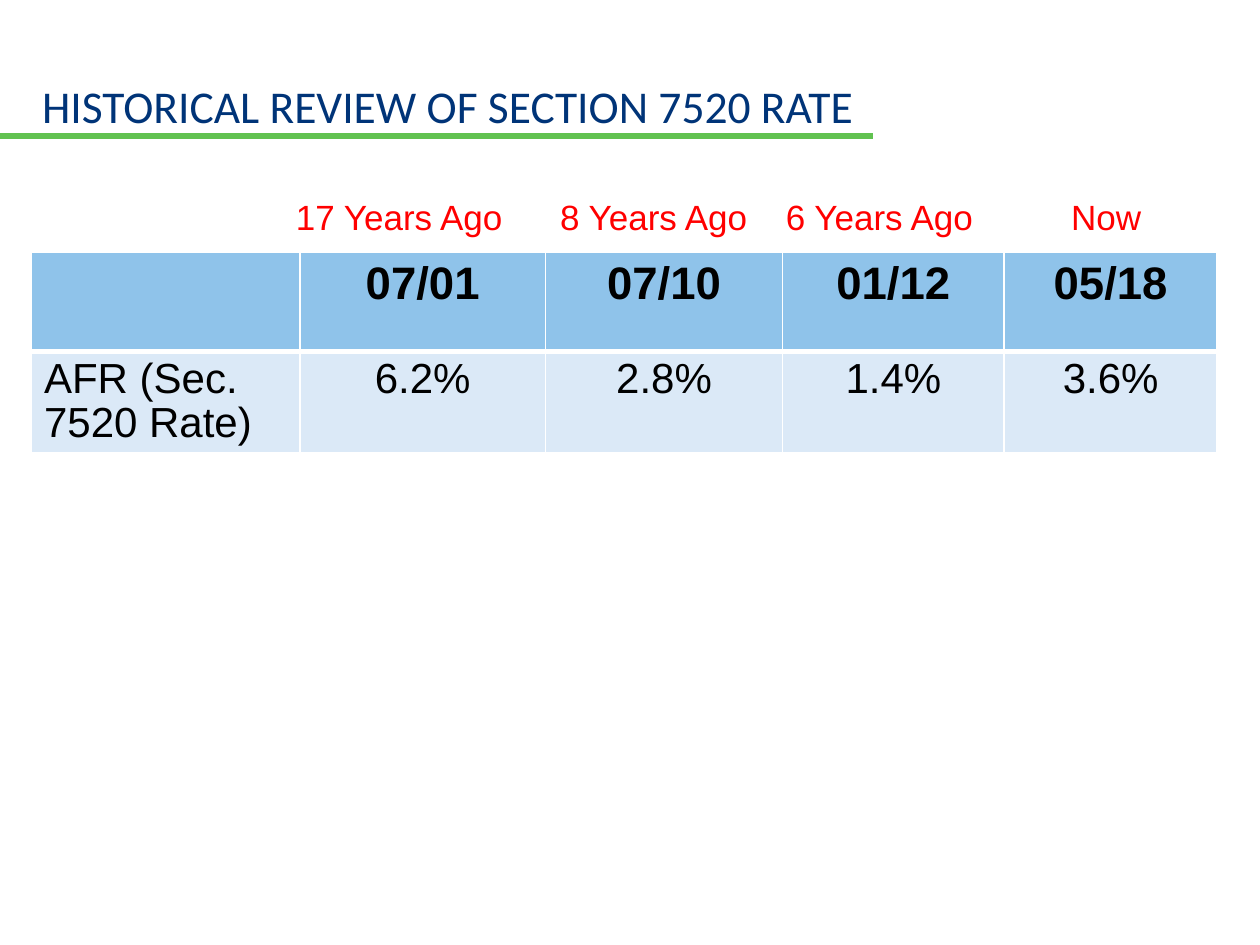
from dataclasses import dataclass
from typing import Any

from lxml.etree import SubElement
from pptx import Presentation
from pptx.dml.color import RGBColor
from pptx.enum.shapes import MSO_CONNECTOR
from pptx.enum.text import MSO_ANCHOR, PP_ALIGN
from pptx.oxml.ns import qn
from pptx.util import Pt

NAVY = RGBColor(0x00, 0x34, 0x78)
GREEN = RGBColor(0x61, 0xC2, 0x50)
RED = RGBColor(0xFF, 0x00, 0x00)
BLACK = RGBColor(0x00, 0x00, 0x00)
WHITE = RGBColor(0xFF, 0xFF, 0xFF)
HEADER_BLUE = RGBColor(0x8F, 0xC3, 0xEA)
BODY_BLUE = RGBColor(0xDB, 0xE9, 0xF7)


@dataclass
class RateSlide:
    slide: Any
    heading_font: str = "Calibri"
    body_font: str = "Arial"

    def add_text(self, paragraph, text, size, color, font, bold=False):
        run = paragraph.add_run()
        run.text = text
        run.font.name = font
        run.font.size = Pt(size)
        run.font.bold = bold
        run.font.color.rgb = color

    def title(self, text, left, top, width, height):
        heading = self.slide.shapes.title
        heading.left, heading.top = Pt(left), Pt(top)
        heading.width, heading.height = Pt(width), Pt(height)
        frame = heading.text_frame
        frame.margin_left = frame.margin_right = 0
        frame.margin_top = frame.margin_bottom = 0
        frame.vertical_anchor = MSO_ANCHOR.BOTTOM
        frame.word_wrap = True
        paragraph = frame.paragraphs[0]
        paragraph.alignment = PP_ALIGN.LEFT
        paragraph.line_spacing = Pt(28)
        self.add_text(paragraph, text, 26, NAVY, self.heading_font)

    def rule(self, left, right, y):
        underline = self.slide.shapes.add_connector(
            MSO_CONNECTOR.STRAIGHT, Pt(left), Pt(y), Pt(right), Pt(y))
        underline.line.color.rgb = GREEN
        underline.line.width = Pt(3)
        SubElement(underline._element.spPr, qn("a:effectLst"))

    def period_labels(self, labels, centers, left, top, width, height):
        periods = self.slide.shapes.add_textbox(Pt(left), Pt(top), Pt(width), Pt(height))
        frame = periods.text_frame
        frame.word_wrap = True
        paragraph = frame.paragraphs[0]
        tabs = SubElement(paragraph._p.get_or_add_pPr(), qn("a:tabLst"))
        for center in centers:
            SubElement(tabs, qn("a:tab"), pos=str(Pt(center)), algn="ctr")
        self.add_text(paragraph, "\t".join(labels), 20, RED, self.body_font)

    def borders(self, cell, bottom_width):
        properties = cell._tc.get_or_add_tcPr()
        for side, width in (("L", 1), ("R", 1), ("T", 1), ("B", bottom_width)):
            edge = SubElement(properties, qn(f"a:ln{side}"), w=str(Pt(width)))
            fill = SubElement(edge, qn("a:solidFill"))
            SubElement(fill, qn("a:srgbClr"), val=str(WHITE))

    def rate_table(self, rows, column_widths, row_height, left, top):
        rates = self.slide.shapes.add_table(
            len(rows), len(column_widths), Pt(left), Pt(top),
            Pt(sum(column_widths)), Pt(row_height * len(rows))).table
        for column, width in zip(rates.columns, column_widths):
            column.width = Pt(width)
        for r, values in enumerate(rows):
            rates.rows[r].height = Pt(row_height)
            header = r == 0
            for c, value in enumerate(values):
                cell = rates.cell(r, c)
                self.borders(cell, 3 if header else 1)
                cell.fill.solid()
                cell.fill.fore_color.rgb = HEADER_BLUE if header else BODY_BLUE
                if value:
                    paragraph = cell.text_frame.paragraphs[0]
                    paragraph.alignment = PP_ALIGN.CENTER if c else PP_ALIGN.LEFT
                    if not header:
                        paragraph.line_spacing = 0.95
                    self.add_text(paragraph, value, 26 if header else 24,
                                  BLACK, self.body_font, header)


def main():
    presentation = Presentation()
    presentation.slide_width, presentation.slide_height = Pt(720), Pt(540)
    page = RateSlide(presentation.slides.add_slide(presentation.slide_layouts[5]))
    page.rule(0, 499, 77.8)
    page.title("HISTORICAL REVIEW OF SECTION 7520 RATE", 24, 18.7, 478, 57)
    page.rate_table(
        [["", "07/01", "07/10", "01/12", "05/18"],
         ["AFR (Sec. 7520 Rate)", "6.2%", "2.8%", "1.4%", "3.6%"]],
        [153.4, 140.4, 135.4, 126.7, 121.7], 56.9, 18, 144)
    page.period_labels(
        ["17 Years Ago", "8 Years Ago", "6 Years Ago", "Now"],
        [204.5, 333.5, 463], 162, 108, 498, 31.5)
    presentation.save("out.pptx")


if __name__ == "__main__":
    main()
